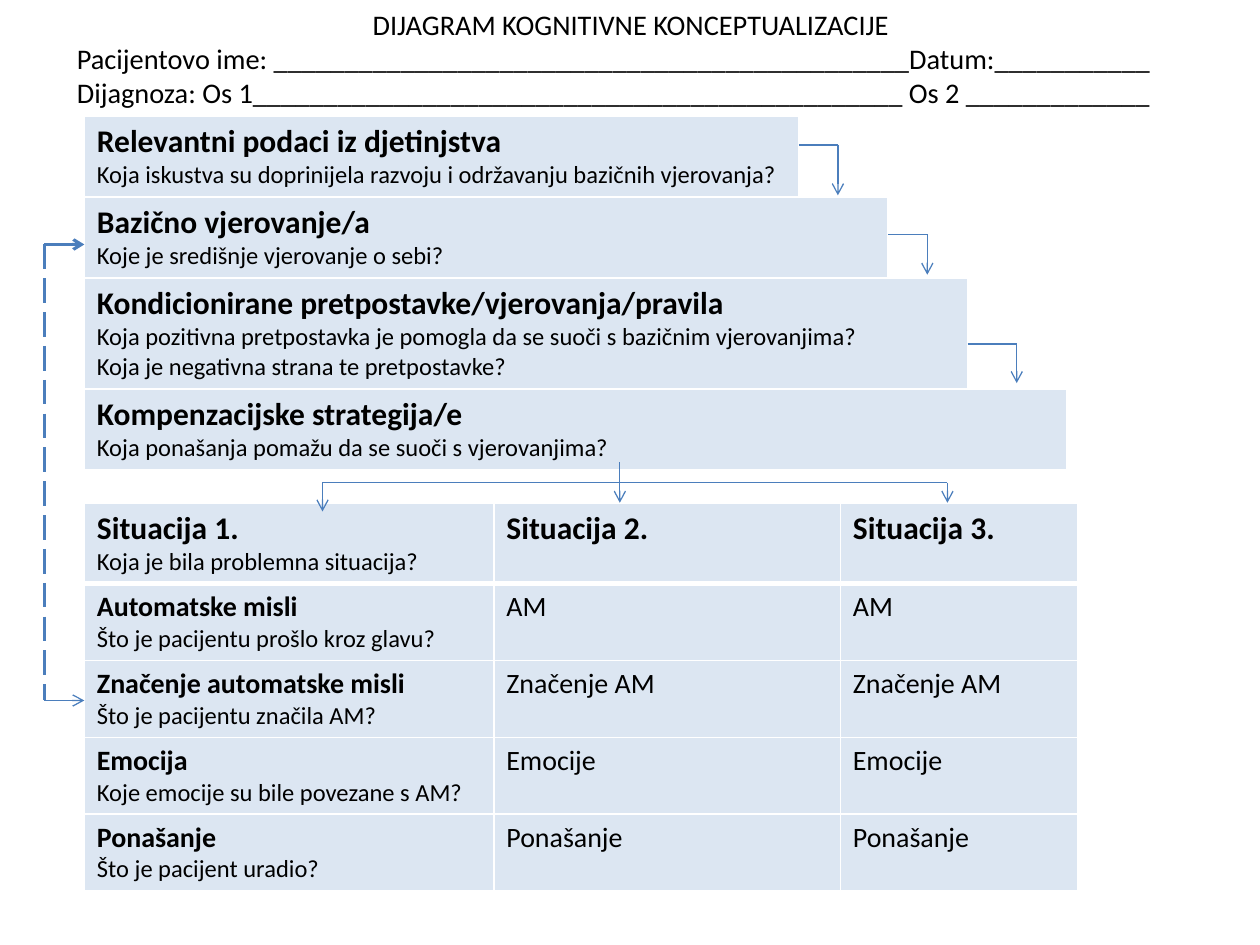
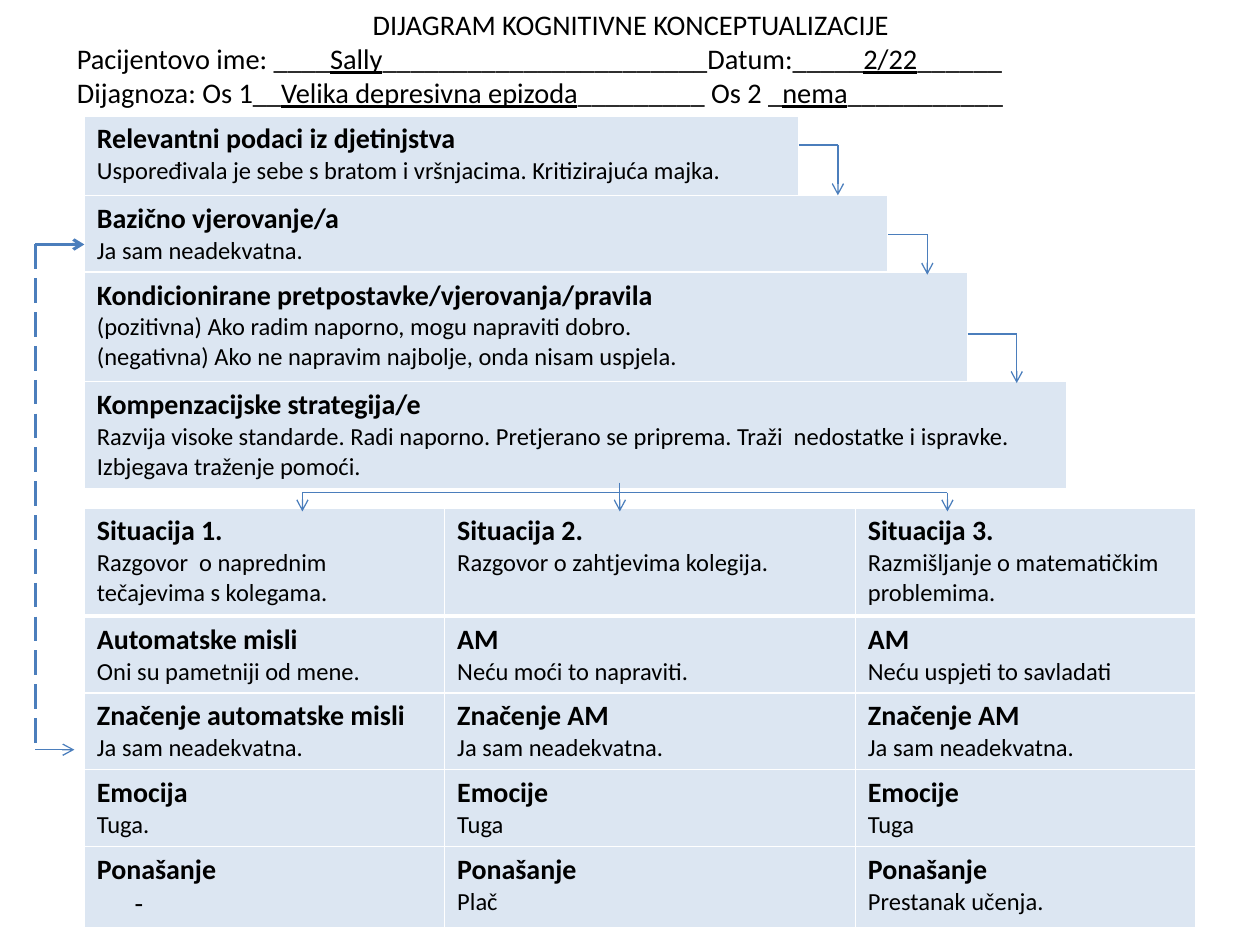
from itertools import pairwise

from lxml import etree
from pptx import Presentation
from pptx.dml.color import RGBColor
from pptx.enum.dml import MSO_LINE
from pptx.enum.shapes import MSO_CONNECTOR
from pptx.enum.text import MSO_ANCHOR, MSO_AUTO_SIZE, PP_ALIGN
from pptx.oxml.ns import qn
from pptx.util import Pt

STRAIGHT = MSO_CONNECTOR.STRAIGHT
LONG_DASH = MSO_LINE.LONG_DASH
MIDDLE = MSO_ANCHOR.MIDDLE
NO_AUTOFIT = MSO_AUTO_SIZE.NONE
CENTER, LEFT = PP_ALIGN.CENTER, PP_ALIGN.LEFT

FONT = "Calibri"
COLORS = {"text": "000000", "panel": "DCE6F2", "blank": "FFFFFF",
          "border": "FFFFFF", "arrow": "4B7EBC"}
TITLE_ONLY = 5
TABLE_LEFT = 48.2
BELIEFS_TOP = 66.2
BELIEF_COLUMNS = [408.2, 51.1, 45.4, 56.9, 67.7]
DETAIL_SIZE = 14
THIN, THICK = 0.75, 1.75

TITLE = "DIJAGRAM KOGNITIVNE KONCEPTUALIZACIJE"
BELIEFS = [
    "Relevantni podaci iz djetinjstva",
    "Bazično vjerovanje/a",
    "Kondicionirane pretpostavke/vjerovanja/pravila",
    "Kompenzacijske strategija/e",
]
SITUATIONS = [
    ["Situacija 1.", "Situacija 2.", "Situacija 3."],
    ["Automatske misli", "AM", "AM"],
    ["Značenje automatske misli", "Značenje AM", "Značenje AM"],
    ["Emocija", "Emocije", "Emocije"],
    ["Ponašanje", "Ponašanje", "Ponašanje"],
]

# In a form line, every second piece is a filled-in, underlined value.
BLANK_FORM = {
    "form": [
        ["Pacijentovo ime: " + "_" * 45 + "Datum:" + "_" * 11],
        ["Dijagnoza: Os 1" + "_" * 46 + " Os 2 " + "_" * 13],
    ],
    "belief_size": 18,
    "belief_rows": [46.3, 46.3, 63.4, 46.3],
    "belief_details": [
        ["Koja iskustva su doprinijela razvoju i održavanju bazičnih vjerovanja?"],
        ["Koje je središnje vjerovanje o sebi?"],
        ["Koja pozitivna pretpostavka je pomogla da se suoči s bazičnim vjerovanjima?",
         "Koja je negativna strana te pretpostavke?"],
        ["Koja ponašanja pomažu da se suoči s vjerovanjima?"],
    ],
    "situation_size": 18,
    "situations_top": 287.3,
    "situation_columns": [234, 198, 135.4],
    "situation_rows": [46, 43.9, 43.9, 43.9, 43.9],
    "situation_details": [
        ["Koja je bila problemna situacija?", "", ""],
        ["Što je pacijentu prošlo kroz glavu?", "", ""],
        ["Što je pacijentu značila AM?", "", ""],
        ["Koje emocije su bile povezane s AM?", "", ""],
        ["Što je pacijent uradio?", "", ""],
    ],
    "loop": {"left": 25.2, "bottom": 400.3, "end": 48.2},
    "rule_exit": 196.6,
    "fork": {"top": 264.2, "bar": 275.8, "left": 184.3, "tips": (292.3, 287.3, 287.3)},
}
SALLY_FORM = {
    "form": [
        ["Pacijentovo ime: ____", "Sally", "_" * 23 + "Datum:_____", "2/22", "______"],
        ["Dijagnoza: Os 1__", "Velika depresivna epizoda", "_________ Os 2 _",
         "nema", "_" * 11],
    ],
    "belief_size": 16,
    "belief_rows": [45.4, 43.9, 62.6, 61],
    "belief_details": [
        ["Uspoređivala je sebe s bratom i vršnjacima. Kritizirajuća majka."],
        ["Ja sam neadekvatna."],
        ["(pozitivna) Ako radim naporno, mogu napraviti dobro.",
         "(negativna) Ako ne napravim najbolje, onda nisam uspjela."],
        ["Razvija visoke standarde. Radi naporno. Pretjerano se priprema. "
         "Traži  nedostatke i ispravke. Izbjegava traženje pomoći."],
    ],
    "situation_size": 16,
    "situations_top": 290.2,
    "situation_columns": [205.9, 234.7, 194.4],
    "situation_rows": [61.9, 43.9, 43.9, 43.9, 46],
    "situation_details": [
        ["Razgovor  o naprednim tečajevima s kolegama.",
         "Razgovor o zahtjevima kolegija.",
         "Razmišljanje o matematičkim problemima."],
        ["Oni su pametniji od mene.", "Neću moći to napraviti.",
         "Neću uspjeti to savladati"],
        ["Ja sam neadekvatna."] * 3,
        ["Tuga.", "Tuga", "Tuga"],
        ["-", "Plač", "Prestanak učenja."],
    ],
    "loop": {"left": 20.2, "bottom": 428.4, "end": 42.5},
    "rule_exit": 190.8,
    "fork": {"top": 275.8, "bar": 281.5, "left": 172.8, "tips": (292.3, 292.3, 292.3)},
}


def rgb(name):
    return RGBColor.from_string(COLORS[name])


def add_span(para, text, size, bold=False, underline=False):
    span = para.add_run()
    span.text = text
    font = span.font
    font.name, font.size, font.bold, font.underline = FONT, Pt(size), bold, underline
    font.color.rgb = rgb("text")


def next_paragraph(frame):
    """Return the first paragraph while it is empty, else a new one."""
    first = frame.paragraphs[0]
    return frame.add_paragraph() if first.runs else first


def set_title(slide, form_lines):
    box = slide.shapes.title
    box.left, box.top, box.width, box.height = Pt(36.7), Pt(0), Pt(647.3), Pt(66.2)
    frame = box.text_frame
    frame.auto_size, frame.vertical_anchor = NO_AUTOFIT, MIDDLE
    for pieces in [[TITLE], *form_lines]:
        para = next_paragraph(frame)
        para.alignment = CENTER if pieces == [TITLE] else LEFT
        for index, piece in enumerate(pieces):
            add_span(para, piece, size=16.2, underline=index % 2 == 1)


def style_cell(cell, fill, top=1, bottom=1):
    properties = cell._tc.get_or_add_tcPr()
    for side, width in (("L", 1), ("R", 1), ("T", top), ("B", bottom)):
        line = etree.SubElement(properties, qn(f"a:ln{side}"), w=str(Pt(width)))
        solid = etree.SubElement(line, qn("a:solidFill"))
        etree.SubElement(solid, qn("a:srgbClr"), val=COLORS["border"])
    cell.fill.solid()
    cell.fill.fore_color.rgb = rgb(fill)


def write_cell(cell, heading, details, size, bold=True):
    frame = cell.text_frame
    add_span(next_paragraph(frame), heading, size=size, bold=bold)
    for detail in details:
        para = next_paragraph(frame)
        is_dash = detail == "-"
        if is_dash:
            para._p.get_or_add_pPr().set("marL", str(Pt(21.6)))
        add_span(para, detail, size=16 if is_dash else DETAIL_SIZE)


def add_grid(slide, top, columns, rows):
    frame = slide.shapes.add_table(len(rows), len(columns), Pt(TABLE_LEFT), Pt(top),
                                   Pt(sum(columns)), Pt(sum(rows)))
    table = frame.table
    table.first_row = table.horz_banding = False
    for column, width in zip(table.columns, columns):
        column.width = Pt(width)
    for row, height in zip(table.rows, rows):
        row.height = Pt(height)
    return table


def add_beliefs(slide, content):
    """Add the staircase: each row's panel is one column wider than the last."""
    table = add_grid(slide, BELIEFS_TOP, BELIEF_COLUMNS, content["belief_rows"])
    last = len(BELIEF_COLUMNS) - 1
    for row, (heading, details) in enumerate(zip(BELIEFS, content["belief_details"])):
        for column in range(last + 1):
            style_cell(table.cell(row, column), "panel" if column <= row else "blank")
        if row > 0:
            table.cell(row, 0).merge(table.cell(row, row))
        if row + 1 < last:
            table.cell(row, row + 1).merge(table.cell(row, last))
        write_cell(table.cell(row, 0), heading, details, content["belief_size"])


def add_situations(slide, content):
    table = add_grid(slide, content["situations_top"], content["situation_columns"],
                     content["situation_rows"])
    for row, (headings, details) in enumerate(zip(SITUATIONS, content["situation_details"])):
        for column, (heading, detail) in enumerate(zip(headings, details)):
            cell = table.cell(row, column)
            style_cell(cell, "panel", top=3 if row == 1 else 1, bottom=3 if row == 0 else 1)
            write_cell(cell, heading, [detail] if detail else [],
                       size=content["situation_size"] if row == 0 else 16,
                       bold=row == 0 or bool(detail))


def add_line(slide, start, end, width=THIN, arrow=False, dash=None):
    connector = slide.shapes.add_connector(STRAIGHT, *map(Pt, start), *map(Pt, end))
    line = connector.line
    line.color.rgb, line.width = rgb("arrow"), Pt(width)
    if dash:
        line.dash_style = dash
    if arrow:
        etree.SubElement(line._get_or_add_ln(), qn("a:tailEnd"), type="arrow")
    etree.SubElement(connector._element.spPr, qn("a:effectLst"))


def add_route(slide, *points):
    """Join the points with lines; the last one ends in an arrowhead."""
    for start, end in pairwise(points):
        add_line(slide, start, end, arrow=end == points[-1])


def add_feedback_loop(slide, left, bottom, end, top=139.7):
    add_line(slide, (left, top), (TABLE_LEFT, top), width=THICK, arrow=True)
    add_line(slide, (left, top), (left, bottom), width=THICK, dash=LONG_DASH)
    add_line(slide, (left, bottom), (end, bottom), arrow=True)


def add_stair_arrows(slide, rule_exit):
    for left, right, top, bottom in ((456.5, 478.8, 82.8, 111.6),
                                     (507.6, 529.9, 133.9, 157),
                                     (553, 581, rule_exit, 218.9)):
        add_route(slide, (left, top), (right, top), (right, bottom))


def add_fork(slide, top, bar, left, tips, middle=354.2, right=541.4):
    """Lead from the strategies down to the three situations."""
    left_tip, middle_tip, right_tip = tips
    add_route(slide, (middle, top), (middle, middle_tip))
    add_line(slide, (left, bar), (right, bar))
    add_route(slide, (left, bar), (left, left_tip))
    add_route(slide, (right, bar), (right, right_tip))


def add_diagram(deck, content):
    slide = deck.slides.add_slide(deck.slide_layouts[TITLE_ONLY])
    set_title(slide, content["form"])
    add_beliefs(slide, content)
    add_situations(slide, content)
    add_feedback_loop(slide, **content["loop"])
    add_stair_arrows(slide, content["rule_exit"])
    add_fork(slide, **content["fork"])


def main():
    deck = Presentation()
    deck.slide_width, deck.slide_height = Pt(720), Pt(540)
    for content in (BLANK_FORM, SALLY_FORM):
        add_diagram(deck, content)
    deck.save("out.pptx")


if __name__ == "__main__":
    main()
